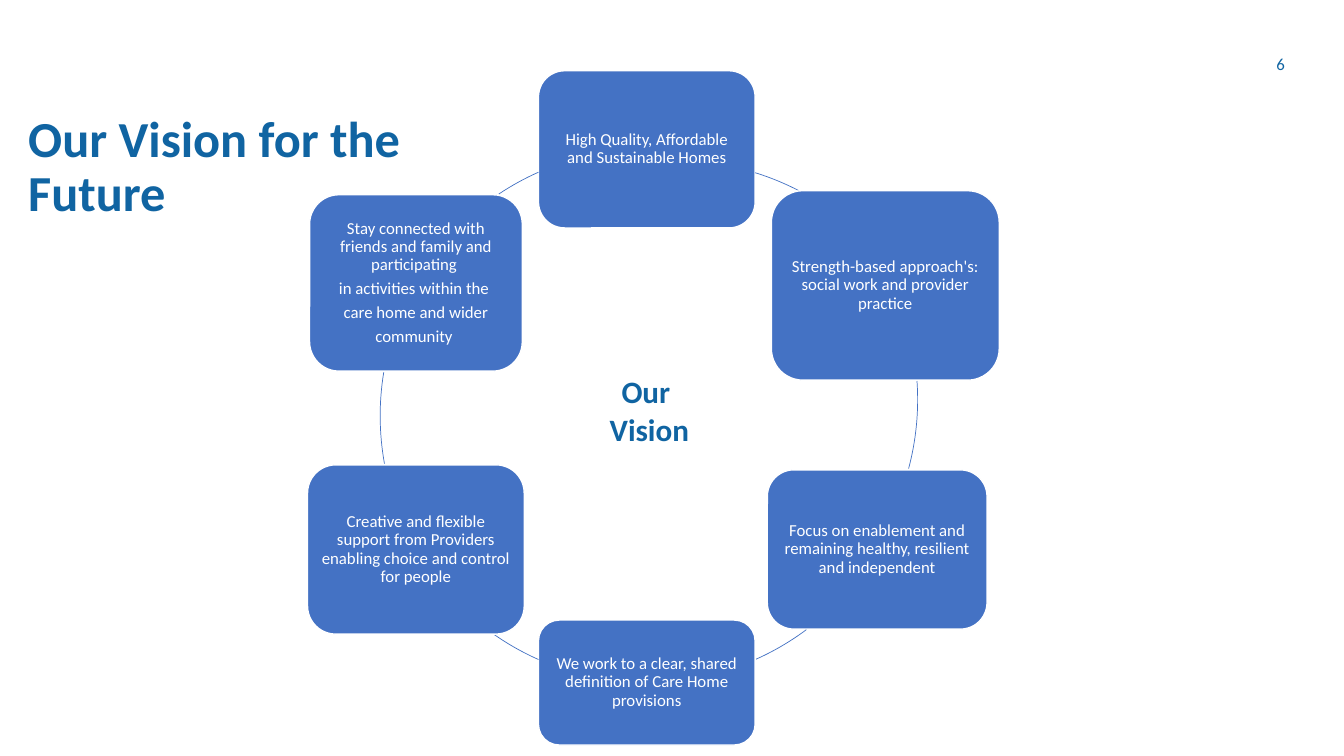
from math import cos, sin, tan, radians
from lxml.etree import SubElement as Sub
from pptx import Presentation
from pptx.dml.color import RGBColor
from pptx.enum.shapes import MSO_SHAPE as Shape
from pptx.enum.text import MSO_ANCHOR as Anchor, MSO_AUTO_SIZE as Fit, PP_ALIGN as Align
from pptx.oxml.ns import qn
from pptx.util import Inches, Pt

NAVY = RGBColor(0x10, 0x64, 0xA2)
BLUE = RGBColor(0x44, 0x72, 0xC4)
WHITE = RGBColor(0xFF, 0xFF, 0xFF)

WIDE, HIGH = Inches(13.33), Inches(7.5)
PAGE = (0, 0, WIDE, HIGH)

CARDS = [
    ((33.43, 0, 30.71, 23.28), ["High Quality, Affordable and Sustainable Homes"]),
    ((66.43, 17.76, 32.29, 28.06),
     ["Strength-based approach's: social work and provider practice"]),
    ((65.86, 59.1, 31.14, 23.58),
     ["Focus on enablement and remaining healthy, resilient and independent"]),
    ((33.43, 81.34, 30.71, 18.51),
     ["We work to a clear, shared definition of Care Home provisions"]),
    ((0.71, 58.36, 30.71, 25.07),
     ["Creative and flexible support from Providers enabling choice and control for people"]),
    ((1, 18.36, 30.14, 26.12),
     ["Stay connected with friends and family and participating ",
      "in activities within the ", "care home and wider", "community "]),
]
MID = (48.8, 51.1)
ARCS = [
    ((52.9, 52.8), -72.7, -62.6),
    ((49.36, 48.7), -4, 15),
    (MID, 53.3, 66),
    (MID, 114, 125.2),
    (MID, 169.7, 189.4),
    (MID, 236.3, 246),
]


def part(box, area):
    """Return the part of a box that an area in percent covers."""
    left, top, wide, high = box
    x, y, w, h = area
    return (int(left + wide * x / 100), int(top + high * y / 100),
            int(wide * w / 100), int(high * h / 100))


def style(item, **form):
    """Set each format value on an item."""
    for key, val in form.items():
        setattr(item, key, val)


def write(shape, lines, inset, color, para, **font):
    """Fill a shape with styled paragraphs."""
    frame = shape.text_frame
    style(frame, **{"margin_" + side: Inches(inset)
                    for side in ("left", "top", "right", "bottom")})
    style(frame, auto_size=Fit.NONE, word_wrap=True)
    frame.text = "\n".join(lines)
    for line in frame.paragraphs:
        style(line, **para)
        style(line.font, name="Calibri", **font)
        line.font.color.rgb = color
    return frame


def head(slide, box):
    """Place the title and the page number."""
    title = slide.shapes.title
    spot = part(box, (1.8, 14.53, 28.8, 15.73))
    style(title, **dict(zip(("left", "top", "width", "height"), spot)))
    frame = write(title, ["Our Vision for the Future"], 0.04, NAVY,
                  {"alignment": Align.LEFT, "line_spacing": 0.9},
                  size=Pt(36), bold=True)
    frame.vertical_anchor = Anchor.TOP
    page = slide.shapes.add_textbox(*part(box, (92.9, 5.73, 3.45, 5.33)))
    frame = write(page, ["6"], 0.1, NAVY, {"alignment": Align.RIGHT}, size=Pt(12))
    frame.vertical_anchor = Anchor.MIDDLE


def card(slide, box, lines):
    """Draw one rounded card with its text."""
    shape = slide.shapes.add_shape(Shape.ROUNDED_RECTANGLE, *box)
    shape.shadow.inherit = False
    shape.fill.solid()
    shape.fill.fore_color.rgb = BLUE
    shape.line.color.rgb = WHITE
    shape.line.width = Pt(1)
    para = {"alignment": Align.CENTER, "line_spacing": 0.9, "space_after": Pt(4.2)}
    frame = write(shape, lines, 0.05, WHITE, para, size=Pt(12))
    frame.vertical_anchor = Anchor.MIDDLE


def bend(size, start, end):
    """Return the four curve points of an arc within its circle's box."""
    first, last = radians(start), radians(end)
    pull = 4 / 3 * tan((last - first) / 4)
    dots = [(cos(turn) - tug * sin(turn), sin(turn) + tug * cos(turn))
            for turn, tug in ((first, 0), (first, pull), (last, -pull), (last, 0))]
    return [(round(size * (1 + x)), round(size * (1 + y))) for x, y in dots]


def arc(slide, box, mid, start, end):
    """Draw an open arc in the box of its whole circle."""
    x, y, size, _ = part(box, (*mid, 37.8, 0))
    form = slide.shapes.build_freeform(x - size, y - size)
    form.add_line_segments([(x + size, y + size)], close=False)
    curve = form.convert_to_shape()
    trace = next(curve.element.iter(qn("a:path")))
    trace[:] = []
    dots = bend(size, start, end)
    for tag, group in (("a:moveTo", dots[:1]), ("a:cubicBezTo", dots[1:])):
        step = Sub(trace, qn(tag))
        for across, down in group:
            Sub(step, qn("a:pt"), x=str(across), y=str(down))
    curve.shadow.inherit = False
    curve.fill.background()
    curve.line.color.rgb = BLUE
    curve.line.width = Pt(0.5)


def ring(slide, box):
    """Place the cards, the arcs between them and the centre label."""
    for (area, lines), sweep in zip(CARDS, ARCS):
        card(slide, part(box, area), lines)
        arc(slide, box, *sweep)
    label = slide.shapes.add_textbox(*part(box, (44, 44.7, 10.3, 10.7)))
    frame = write(label, ["Our ", "Vision"], 0, NAVY, {"alignment": Align.CENTER},
                  size=Pt(22.2), bold=True)
    frame.word_wrap = False


def main():
    """Build and save the slide."""
    deck = Presentation()
    style(deck, slide_width=WIDE, slide_height=HIGH)
    slide = deck.slides.add_slide(deck.slide_layouts[5])
    head(slide, PAGE)
    ring(slide, part(PAGE, (22.51, 9.36, 52.51, 89.33)))
    deck.save("out.pptx")


if __name__ == "__main__":
    main()
